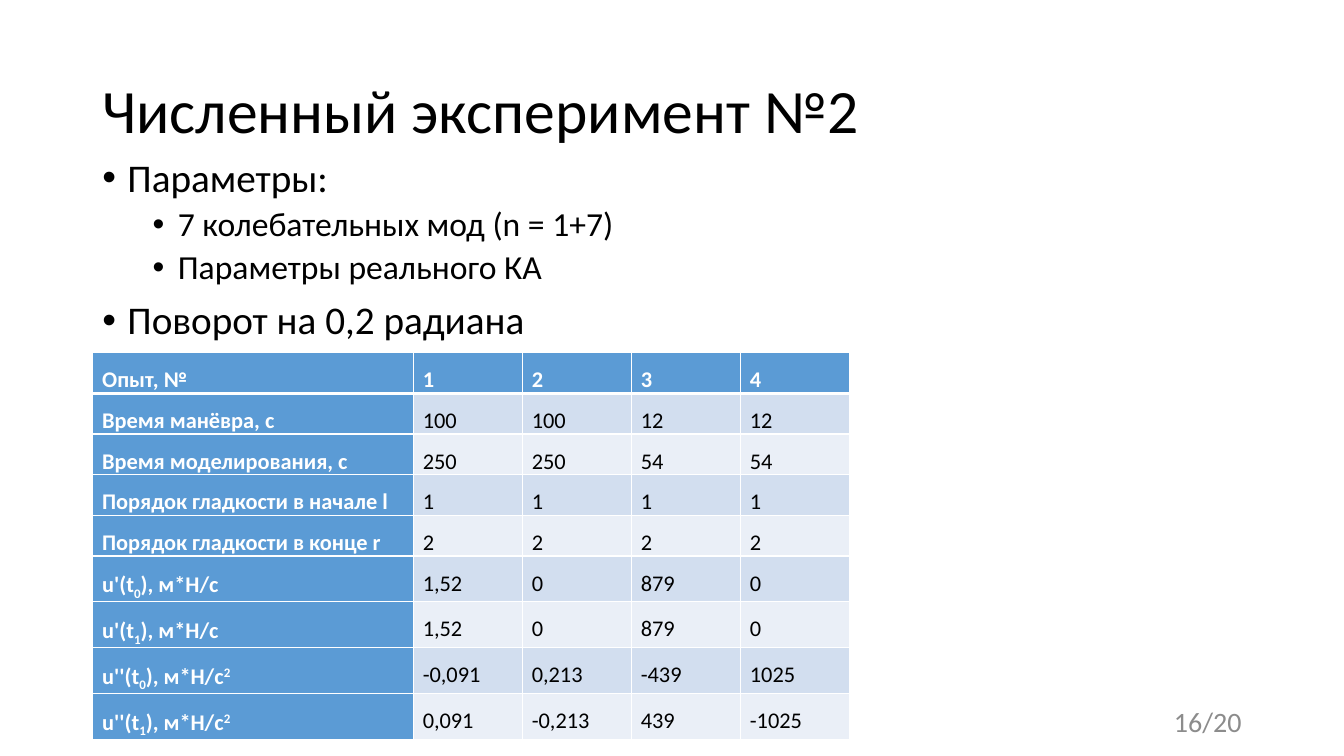
from lxml import etree
from pptx import Presentation
from pptx.dml.color import RGBColor
from pptx.enum.text import MSO_ANCHOR, PP_ALIGN
from pptx.oxml.ns import qn
from pptx.util import Pt

MIDDLE, TOP = MSO_ANCHOR.MIDDLE, MSO_ANCHOR.TOP
LEFT, RIGHT, JUST = PP_ALIGN.LEFT, PP_ALIGN.RIGHT, PP_ALIGN.JUSTIFY

FONT = "Calibri"
COLORS = {
    "black": "000000",
    "white": "FFFFFF",
    "gray": "8C8C8C",
    "head": "5B9BD5",
    "odd": "D2DEEF",
    "even": "EAEFF7",
}

BULLETS = [
    ("Параметры:", 0),
    ("7 колебательных мод (n = 1+7)", 1),
    ("Параметры реального КА", 1),
    ("Поворот на 0,2 радиана", 0),
]
LEVELS = [(28, 18, 10), (24, 54, 5)]

SUB, SUP = -25, 30


def rate(mark, index, power=""):
    parts = [(f"u{mark}(t", 0), (index, SUB), ("), м*Н/с", 0)]
    return parts + [(power, SUP)] if power else parts


ROWS = [
    ("Опыт, №", "1", "2", "3", "4"),
    ("Время манёвра, с", "100", "100", "12", "12"),
    ("Время моделирования, с", "250", "250", "54", "54"),
    ("Порядок гладкости в начале l", "1", "1", "1", "1"),
    ("Порядок гладкости в конце r", "2", "2", "2", "2"),
    (rate("'", "0"), "1,52", "0", "879", "0"),
    (rate("'", "1"), "1,52", "0", "879", "0"),
    (rate("''", "0", "2"), "-0,091", "0,213", "-439", "1025"),
    (rate("''", "1", "2"), "0,091", "-0,213", "439", "-1025"),
]
WIDTHS = [229] + [77.9] * 4
HEIGHT = 29.04


def paint(color):
    return RGBColor.from_string(COLORS[color])


def style(para, size, color, bold=False):
    for run in para.runs:
        font = run.font
        font.name, font.size, font.bold = FONT, Pt(size), bold
        font.color.rgb = paint(color)


def add_box(slide, left, top, width, height, anchor):
    box = slide.shapes.add_textbox(Pt(left), Pt(top), Pt(width), Pt(height))
    frame = box.text_frame
    frame.word_wrap = True
    frame.vertical_anchor = anchor
    return frame


def add_line(slide, text, place, size, color, align, space):
    frame = add_box(slide, *place, MIDDLE)
    frame.text = text
    para = frame.paragraphs[0]
    para.alignment, para.line_spacing = align, space
    style(para, size, color)


def add_list(slide, items, place):
    frame = add_box(slide, *place, TOP)
    frame.text = "\n".join(text for text, _ in items)
    for para, (_, level) in zip(frame.paragraphs, items):
        size, indent, gap = LEVELS[level]
        para.level, para.line_spacing, para.space_before = level, 0.9, Pt(gap)
        style(para, size, "black")
        props = para._p.get_or_add_pPr()
        props.set("marL", str(Pt(indent)))
        props.set("indent", str(Pt(-18)))
        etree.SubElement(props, qn("a:buFont"), typeface="Arial")
        etree.SubElement(props, qn("a:buChar"), char="•")


def add_edges(cell, base):
    props = cell._tc.get_or_add_tcPr()
    for side, width in (("L", 1), ("R", 1), ("T", 1), ("B", base)):
        line = etree.SubElement(props, qn(f"a:ln{side}"), w=str(Pt(width)))
        fill = etree.SubElement(line, qn("a:solidFill"))
        etree.SubElement(fill, qn("a:srgbClr"), val=COLORS["white"])


def fill_cell(cell, parts, head, row):
    cell.margin_left = cell.margin_right = Pt(6.75)
    cell.margin_top = cell.margin_bottom = 0
    add_edges(cell, 3 if row == 0 else 1)
    cell.fill.solid()
    cell.fill.fore_color.rgb = paint("head" if head else ("even", "odd")[row % 2])
    para = cell.text_frame.paragraphs[0]
    para.alignment, para.line_spacing = JUST, 1.5
    for text, shift in parts:
        run = para.add_run()
        run.text = text
        if shift:
            run._r.get_or_add_rPr().set("baseline", str(shift * 1000))
    style(para, 16, "white" if head else "black", head)


def add_grid(slide, rows, left, top):
    shape = slide.shapes.add_table(
        len(rows), len(WIDTHS), Pt(left), Pt(top),
        Pt(sum(WIDTHS)), Pt(HEIGHT * len(rows)))
    table = shape.table
    table.first_col = True
    for col, width in zip(table.columns, WIDTHS):
        col.width = Pt(width)
    for r, values in enumerate(rows):
        table.rows[r].height = Pt(HEIGHT)
        for c, value in enumerate(values):
            parts = [(value, 0)] if isinstance(value, str) else value
            fill_cell(table.cell(r, c), parts, r == 0 or c == 0, r)


def main():
    deck = Presentation()
    deck.slide_width, deck.slide_height = Pt(960), Pt(540)
    slide = deck.slides.add_slide(deck.slide_layouts[6])
    add_line(slide, "Численный эксперимент №2", (66, 28.75, 828, 104.4),
             44, "black", LEFT, 0.9)
    add_list(slide, BULLETS, (66, 109.5, 828, 376.5))
    add_line(slide, "16/20", (678, 500.5, 216, 28.75), 20, "gray", RIGHT, 1)
    add_grid(slide, ROWS, 66.25, 252)
    deck.save("out.pptx")


if __name__ == "__main__":
    main()
